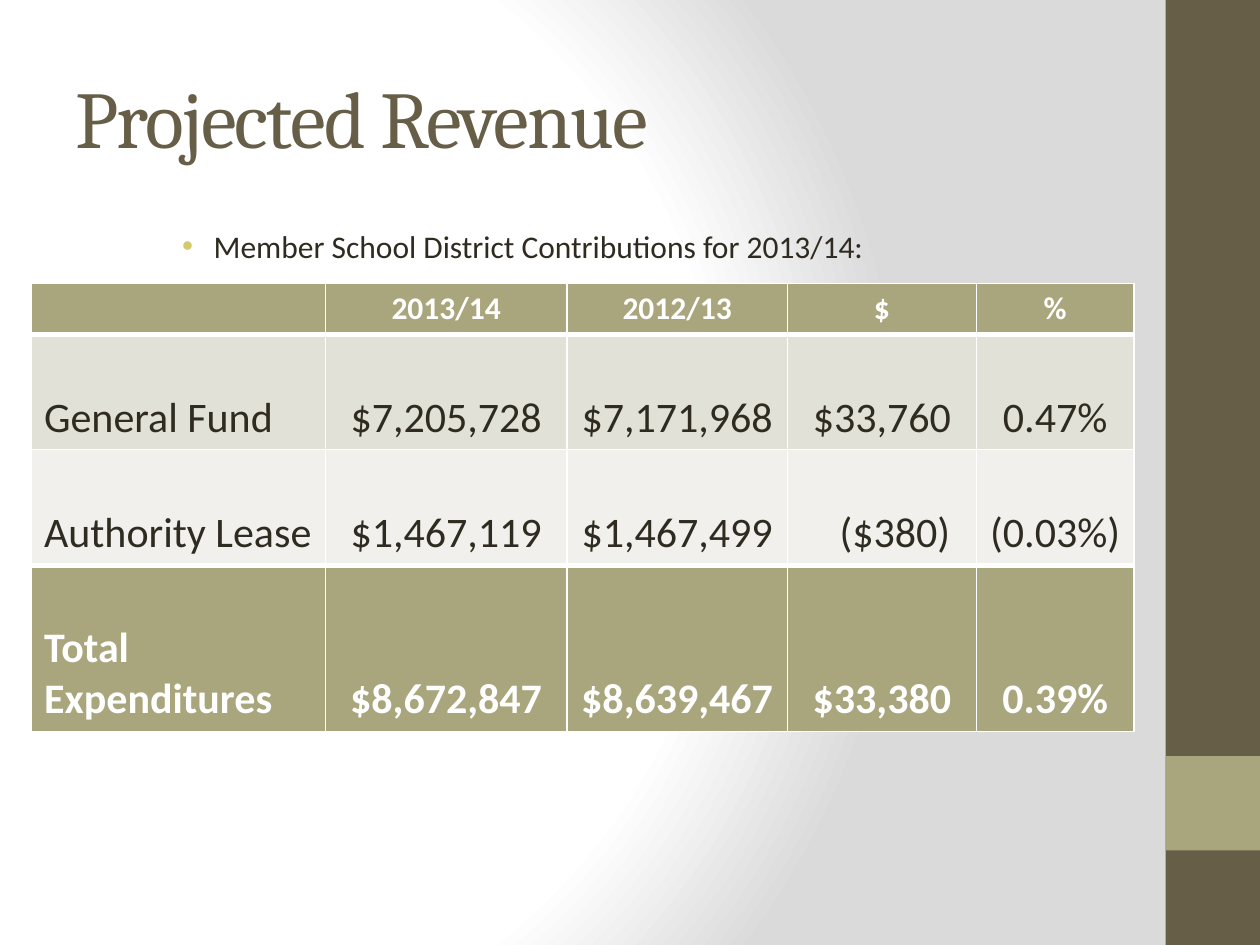
from lxml import etree
from pptx import Presentation
from pptx.dml.color import RGBColor
from pptx.enum import shapes, text
from pptx.oxml import parse_xml
from pptx.oxml.ns import nsdecls, qn
from pptx.util import Pt

COLORS = {"brown": "675E47", "olive": "A9A57C", "ink": "2F2B20", "white": "FFFFFF",
          "bullet": "D2CB6C", "gray": "DADADA", "band": "E2E1D7", "pale": "F1F0EC"}
TITLE = "Projected Revenue"
SUBTITLE = "Member School District Contributions for 2013/14:"
ROWS = [
    ("", "2013/14", "2012/13", "$", "%"),
    ("General Fund", "$7,205,728", "$7,171,968", "$33,760", "0.47%"),
    ("Authority Lease", "$1,467,119", "$1,467,499", "($380)", "(0.03%)"),
    ("Total Expenditures", "$8,672,847", "$8,639,467", "$33,380", "0.39%"),
]
ROW_STYLES = [
    {"height": 29, "size": 18, "fill": "olive", "color": "white", "bold": True, "top": 1, "bottom": 3},
    {"height": 66, "size": 24, "fill": "band", "color": "ink", "bold": False, "top": 3, "bottom": 1},
    {"height": 66, "size": 24, "fill": "pale", "color": "ink", "bold": False, "top": 1, "bottom": 3},
    {"height": 95, "size": 24, "fill": "olive", "color": "white", "bold": True, "top": 3, "bottom": 1},
]
COLUMN_WIDTHS = [168, 138, 126, 108, 90]
SIDEBAR = [(0, 540, "brown"), (432, 54, "olive")]


def rgb(name):
    return RGBColor.from_string(COLORS[name])


def style_font(paragraph, face, size, color, bold=False):
    font = paragraph.font
    font.name, font.size, font.bold = face, Pt(size), bold
    font.color.rgb = rgb(color)


def paint_background(page):
    stops = "".join(f'<a:gs pos="{place}000"><a:srgbClr val="{COLORS[name]}"/></a:gs>'
                    for place, name in [(0, "white"), (75, "white"), (100, "gray")])
    page.background.fill.solid()
    solid = page.background._cSld.find(".//" + qn("a:solidFill"))
    gradient = parse_xml(
        f'<a:gradFill {nsdecls("a")} rotWithShape="1"><a:gsLst>{stops}</a:gsLst>'
        '<a:path path="circle"><a:fillToRect l="20000" t="50000" r="100000" b="50000"/>'
        '</a:path></a:gradFill>')
    solid.getparent().replace(solid, gradient)


def add_text(page, wording, left, top, width, height, face, size, color):
    box = page.shapes.add_textbox(Pt(left), Pt(top), Pt(width), Pt(height))
    box.text_frame.word_wrap = True
    paragraph = box.text_frame.paragraphs[0]
    paragraph.text = wording
    style_font(paragraph, face, size, color)
    return box, paragraph


def add_bullet(paragraph):
    properties = paragraph._p.get_or_add_pPr()
    properties.set("marL", str(Pt(79)))
    properties.set("indent", str(Pt(-18)))
    defaults = properties.find(qn("a:defRPr"))
    for markup in (f'<a:buClr {nsdecls("a")}><a:srgbClr val="{COLORS["bullet"]}"/></a:buClr>',
                   f'<a:buFont {nsdecls("a")} typeface="Arial"/>',
                   f'<a:buChar {nsdecls("a")} char="•"/>'):
        defaults.addprevious(parse_xml(markup))


def set_borders(cell, top, bottom):
    properties = cell._tc.get_or_add_tcPr()
    for side, width in (("L", 1), ("R", 1), ("T", top), ("B", bottom)):
        line = etree.SubElement(properties, qn(f"a:ln{side}"), w=str(Pt(width)))
        fill = etree.SubElement(line, qn("a:solidFill"))
        etree.SubElement(fill, qn("a:srgbClr"), val=COLORS["white"])


def add_revenue_table(page):
    table = page.shapes.add_table(
        len(ROWS), len(COLUMN_WIDTHS), Pt(18), Pt(162), Pt(sum(COLUMN_WIDTHS)),
        Pt(sum(style["height"] for style in ROW_STYLES))).table
    for column, width in zip(table.columns, COLUMN_WIDTHS):
        column.width = Pt(width)
    for row, values, style in zip(table.rows, ROWS, ROW_STYLES):
        row.height = Pt(style["height"])
        for index, (cell, value) in enumerate(zip(row.cells, values)):
            set_borders(cell, style["top"], style["bottom"])
            cell.fill.solid()
            cell.fill.fore_color.rgb = rgb(style["fill"])
            cell.vertical_anchor = text.MSO_ANCHOR.BOTTOM
            paragraph = cell.text_frame.paragraphs[0]
            paragraph.text = value
            paragraph.alignment = text.PP_ALIGN.CENTER if index else text.PP_ALIGN.LEFT
            style_font(paragraph, "Calibri", style["size"], style["color"], style["bold"])
            if value == "($380)":
                paragraph.alignment = text.PP_ALIGN.RIGHT
                cell.margin_right = Pt(15)


def main():
    deck = Presentation()
    deck.slide_width, deck.slide_height = Pt(720), Pt(540)
    page = deck.slides.add_slide(deck.slide_layouts[6])
    paint_background(page)

    for top, height, color in SIDEBAR:
        block = page.shapes.add_shape(shapes.MSO_SHAPE.RECTANGLE, Pt(666), Pt(top), Pt(54), Pt(height))
        block.shadow.inherit = False
        block.fill.solid()
        block.fill.fore_color.rgb = rgb(color)
        block.line.fill.background()

    title, heading = add_text(page, TITLE, 36, 21.6, 600, 90, "Cambria", 46, "brown")
    title.text_frame.vertical_anchor = text.MSO_ANCHOR.MIDDLE
    heading.runs[0]._r.get_or_add_rPr().set("spc", "-100")

    _, subtitle = add_text(page, SUBTITLE, 36, 126, 600, 36, "Calibri", 18, "ink")
    subtitle.space_before = Pt(3.6)
    add_bullet(subtitle)

    add_revenue_table(page)
    deck.save("out.pptx")


if __name__ == "__main__":
    main()
